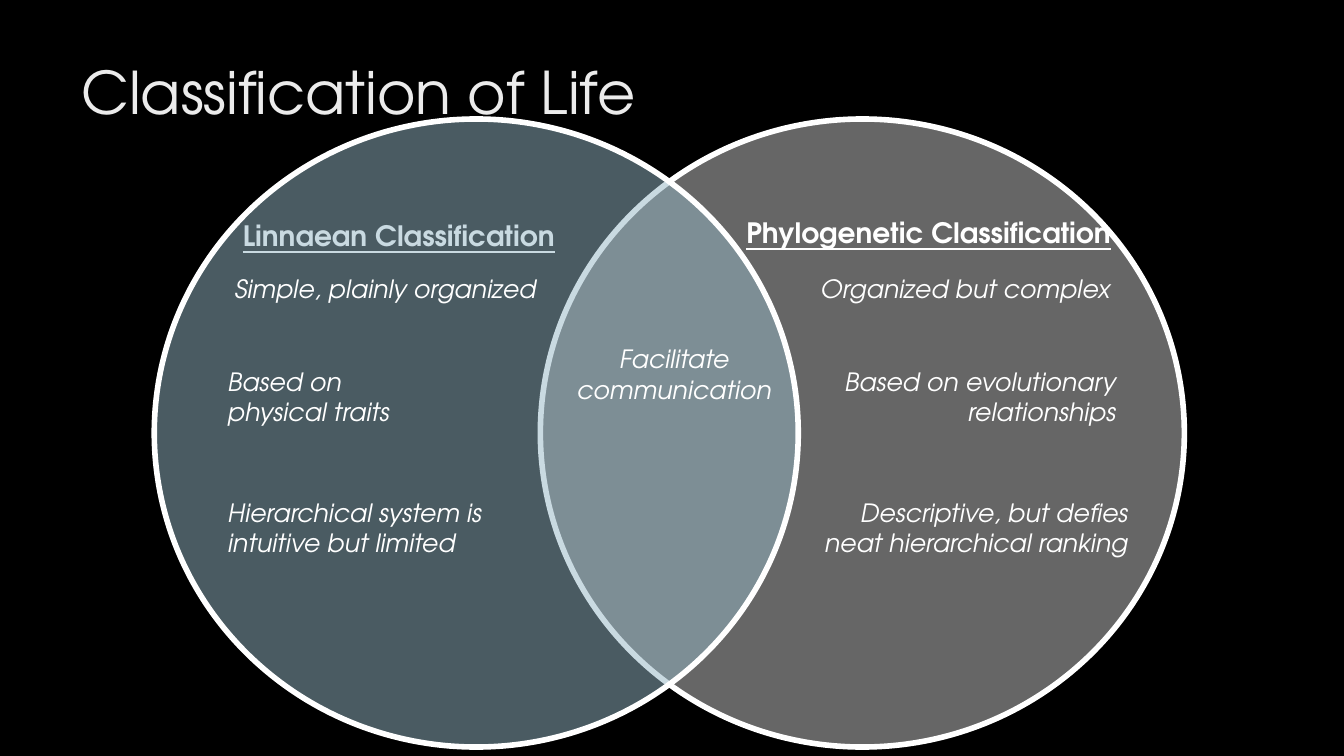
"""Build a Venn diagram slide comparing two systems of classification."""
from lxml import etree
from pptx import Presentation
from pptx.dml.color import RGBColor
from pptx.enum import shapes, text
from pptx.oxml.ns import qn
from pptx.util import Pt

FONT = "TeX Gyre Adventor"
WHITE = "FFFFFF"
LEFT, CENTER, RIGHT = text.PP_ALIGN.LEFT, text.PP_ALIGN.CENTER, text.PP_ALIGN.RIGHT
CIRCLE_TOP, CIRCLE_WIDTH, CIRCLE_HEIGHT = 85, 460, 448.6
ROW_TOPS = (191.5, 258.2, 351.4)
LINNAEAN = (
    (160.5, 247, ["Simple, plainly organized"]),
    (155.5, 190, ["Based on", "physical traits"]),
    (155.5, 214, ["Hierarchical system is intuitive but limited"]),
)
PHYLOGENETIC = (
    (545, 255, ["Organized but complex"]),
    (566.6, 237.6, ["Based on evolutionary relationships"]),
    (566.6, 246.2, ["Descriptive, but defies neat hierarchical ranking"]),
)


def color(value):
    """Turn a hex string into a colour."""
    return RGBColor.from_string(value)


def add_circle(slide, left, fill, opacity):
    """Add one translucent, white-rimmed circle of the diagram."""
    circle = slide.shapes.add_shape(
        shapes.MSO_SHAPE.OVAL, Pt(left), Pt(CIRCLE_TOP), Pt(CIRCLE_WIDTH), Pt(CIRCLE_HEIGHT))
    circle.shadow.inherit = False
    circle.fill.solid()
    circle.fill.fore_color.rgb = color(fill)
    tint = circle.fill._xPr.find(qn("a:solidFill"))[0]
    etree.SubElement(tint, qn("a:alpha")).set("val", str(opacity * 1000))
    circle.line.color.rgb = color(WHITE)
    circle.line.width = Pt(4)


def add_label(slide, box, lines, size, align=LEFT, ink=WHITE, **style):
    """Add a wrapping text box with one paragraph per line."""
    frame = slide.shapes.add_textbox(*map(Pt, box)).text_frame
    frame.word_wrap = True
    frame.vertical_anchor = text.MSO_ANCHOR.TOP
    for index, line in enumerate(lines):
        paragraph = frame.add_paragraph() if index else frame.paragraphs[0]
        paragraph.alignment = align
        run = paragraph.add_run()
        run.text = line
        run.font.name = FONT
        run.font.size = Pt(size)
        run.font.color.rgb = color(ink)
        for name, value in style.items():
            setattr(run.font, name, value)


def add_heading(slide, box, wording, align=LEFT):
    """Add the bold, underlined heading of one circle."""
    add_label(slide, box, [wording], 20, align, bold=True, underline=True)


def add_trait(slide, box, lines, align):
    """Add one italic trait."""
    add_label(slide, box, lines, 18, align, italic=True)


def add_traits(slide, traits, align):
    """Add a circle's traits on the shared rows."""
    for top, (left, width, lines) in zip(ROW_TOPS, traits):
        height = 29 if top == ROW_TOPS[0] else 51
        add_trait(slide, (left, top, width, height), lines, align)


def main():
    """Build and save the slide."""
    deck = Presentation()
    deck.slide_width, deck.slide_height = Pt(960), Pt(540)
    slide = deck.slides.add_slide(deck.slide_layouts[6])
    slide.background.fill.solid()
    slide.background.fill.fore_color.rgb = color("000000")

    add_circle(slide, 386, WHITE, 40)
    add_label(slide, (51, 36, 741, 62), ["Classification of Life"], 42, ink="EBEBEB")
    add_heading(slide, (166.4, 152.6, 240.5, 39), "Linnaean Classification")
    add_heading(slide, (504.7, 150.5, 296, 41), "Phylogenetic Classification", RIGHT)
    add_circle(slide, 110.2, "95B6C5", 50)
    add_traits(slide, LINNAEAN, LEFT)
    add_traits(slide, PHYLOGENETIC, RIGHT)
    add_trait(slide, (401, 242, 161.3, 51), ["Facilitate", "communication"], CENTER)
    deck.save("out.pptx")


if __name__ == "__main__":
    main()
